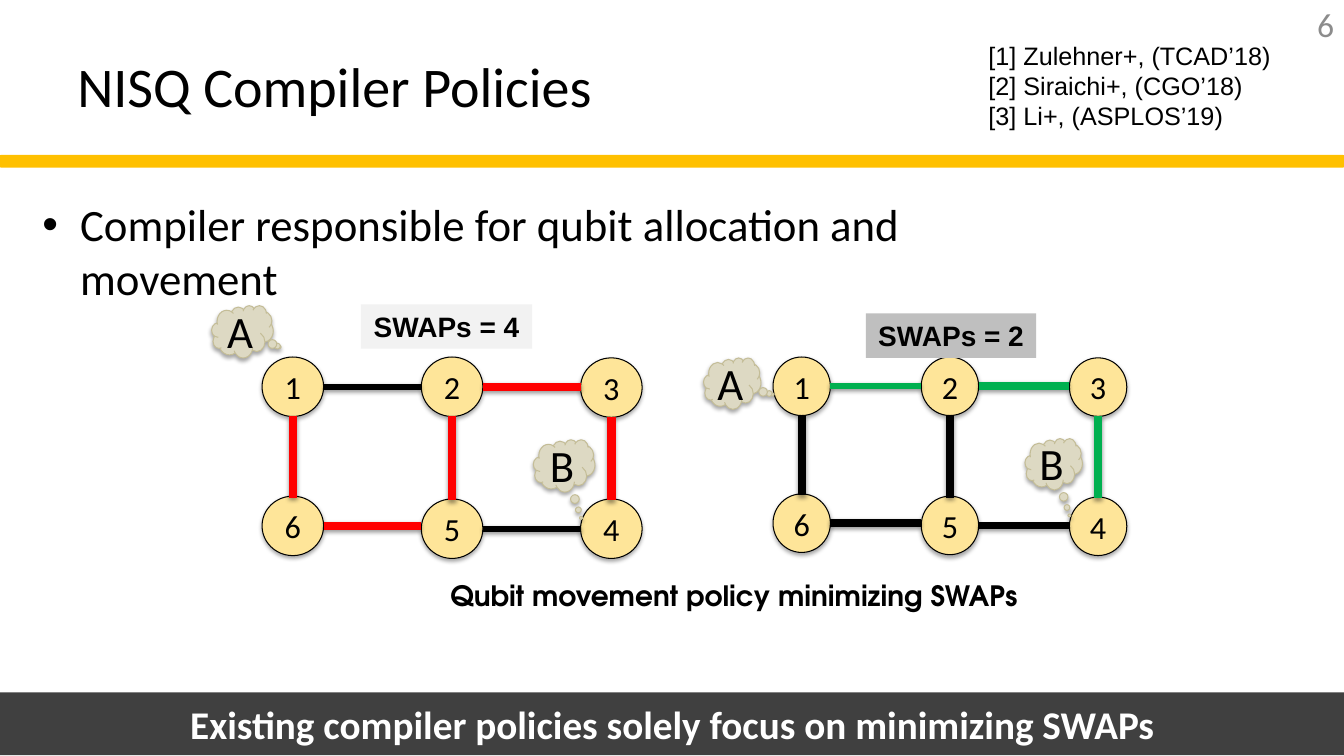
from dataclasses import dataclass

from lxml import etree
from pptx import Presentation
from pptx.dml.color import RGBColor
from pptx.enum import shapes, text
from pptx.oxml import ns
from pptx.util import Pt

# Content
TITLE = "NISQ Compiler Policies"
STATEMENT = "Compiler responsible for qubit allocation and movement"
REFERENCES = ["[1] Zulehner+, (TCAD’18)", "[2] Siraichi+, (CGO’18)", "[3] Li+, (ASPLOS’19)"]
CAPTION = "Qubit movement policy minimizing SWAPs"
TAKEAWAY = "Existing compiler policies solely focus on minimizing SWAPs"
PAGE_NUMBER = "6"

# Qubits in reading order: three in the upper row, three in the lower row
QUBITS = ["1", "2", "3", "6", "5", "4"]


@dataclass
class Theme:
    black: str = "000000"
    white: str = "FFFFFF"
    gold: str = "FFC000"
    dark: str = "404040"
    grey: str = "8C8C8C"
    qubit: str = "FEE599"
    cloud: str = "DDD9C3"
    cloud_line: str = "C4BD97"
    red: str = "FF0000"
    green: str = "00B050"
    light_label: str = "F2F2F2"
    dark_label: str = "BFBFBF"
    body_font: str = "Calibri"
    label_font: str = "Arial"
    caption_font: str = "TeX Gyre Adventor"
    title_size: int = 40
    body_size: int = 32
    takeaway_size: int = 28
    page_size: int = 24
    qubit_size: int = 23
    label_size: int = 20
    reference_size: int = 18
    thin: float = 4.5
    thick: float = 6


theme = Theme()

# Each map: lattice geometry, links (from, to, colour, weight), clouds and label
MAPS = [
    {
        "left": 187.2, "step": 113.75, "size": (44, 42.5),
        "tops": [255, 255, 255.6, 354.4, 356.4, 356.4],
        "links": [("1", "2", theme.black, theme.thin), ("1", "6", theme.red, theme.thick),
                  ("2", "5", theme.red, theme.thick), ("6", "5", theme.red, theme.thick),
                  ("2", "3", theme.red, theme.thick), ("3", "4", theme.red, theme.thick),
                  ("5", "4", theme.black, theme.thin)],
        "clouds": [("A", (151.2, 218.2, 44, 37.4), (0.604, 0.293)),
                   ("B", (381, 314, 44, 37.4), (0.274, 0.997))],
        "label": ("SWAPs = 4", (257.8, 217.4, 122.4, 31.7), theme.light_label),
    },
    {
        "left": 552.2, "step": 105.85, "size": (41, 41.8),
        "tops": [255, 255, 255.6, 352.8, 354.4, 355],
        "links": [("1", "2", theme.green, theme.thin), ("1", "6", theme.black, theme.thick),
                  ("2", "5", theme.black, theme.thick), ("6", "5", theme.black, theme.thick),
                  ("2", "3", theme.green, theme.thick), ("3", "4", theme.green, theme.thick),
                  ("5", "4", theme.black, theme.thin)],
        "clouds": [("A", (502.6, 255.6, 41, 36.7), (0.703, 0.213)),
                   ("B", (732.2, 313.2, 41, 36.7), (0.274, 0.997))],
        "label": ("SWAPs = 2", (618.5, 223.9, 121.7, 31.7), theme.dark_label),
    },
]


def points(box):
    return [Pt(value) for value in box]


def rgb(colour):
    return RGBColor.from_string(colour)


def add_shadow(shape, opacity, distance):
    properties = shape._element.spPr
    for old in properties.findall(ns.qn("a:effectLst")):
        properties.remove(old)
    effects = etree.SubElement(properties, ns.qn("a:effectLst"))
    shadow = etree.SubElement(effects, ns.qn("a:outerShdw"), blurRad=str(Pt(3.1)),
                              dist=str(Pt(distance)), dir="5400000", rotWithShape="0")
    colour = etree.SubElement(shadow, ns.qn("a:srgbClr"), val=theme.black)
    etree.SubElement(colour, ns.qn("a:alpha"), val=str(opacity * 1000))


def write(shape, lines, size, font=theme.body_font, colour=theme.black, bold=False,
          align=text.PP_ALIGN.LEFT, anchor=text.MSO_ANCHOR.TOP, wrap=True, inset=None):
    frame = shape.text_frame
    frame.text = "\n".join(lines)
    frame.auto_size = text.MSO_AUTO_SIZE.NONE
    frame.word_wrap = wrap
    frame.vertical_anchor = anchor
    if inset is not None:
        frame.margin_left = frame.margin_right = Pt(inset)
        frame.margin_top = frame.margin_bottom = Pt(inset)
    for paragraph in frame.paragraphs:
        paragraph.alignment = align
        paragraph.space_before = Pt(0)
        paragraph.font.size = Pt(size)
        paragraph.font.name = font
        paragraph.font.bold = bold
        paragraph.font.color.rgb = rgb(colour)


def add_filled(parent, kind, box, fill, line=None, weight=0.75):
    shape = parent.add_shape(kind, *points(box))
    shape.shadow.inherit = False
    shape.fill.solid()
    shape.fill.fore_color.rgb = rgb(fill)
    if line:
        shape.line.color.rgb = rgb(line)
        shape.line.width = Pt(weight)
    else:
        shape.line.fill.background()
    return shape


def add_symbol(parent, kind, box, fill, line, label, size):
    shape = add_filled(parent, kind, box, fill, line)
    add_shadow(shape, 35, 1.8)
    write(shape, [label], size, align=text.PP_ALIGN.CENTER,
          anchor=text.MSO_ANCHOR.MIDDLE, wrap=False, inset=0)
    return shape


def add_link(parent, start, end, colour, weight):
    (x1, y1, width, height), (x2, y2) = start, end[:2]
    if x1 == x2:
        middle = x1 + width / 2
        ends = (middle, y1 + height, middle, y2 + 1)
    else:
        middle = y1 + height / 2
        ends = (x1 + width, middle, x2, middle)
    link = parent.add_connector(shapes.MSO_CONNECTOR.STRAIGHT, *points(ends))
    link.line.color.rgb = rgb(colour)
    link.line.width = Pt(weight)
    add_shadow(link, 38, 1.6)


def add_map(slide, qubit_map):
    parent = slide.shapes.add_group_shape().shapes
    boxes = {
        name: (qubit_map["left"] + index % 3 * qubit_map["step"], top, *qubit_map["size"])
        for index, (name, top) in enumerate(zip(QUBITS, qubit_map["tops"]))
    }
    for name, box in boxes.items():
        add_symbol(parent, shapes.MSO_SHAPE.OVAL, box, theme.qubit, theme.black,
                   name, theme.qubit_size)
    for start, end, colour, weight in qubit_map["links"]:
        add_link(parent, boxes[start], boxes[end], colour, weight)
    for name, box, tail in qubit_map["clouds"]:
        cloud = add_symbol(parent, shapes.MSO_SHAPE.CLOUD_CALLOUT, box, theme.cloud,
                           theme.cloud_line, name, theme.body_size)
        cloud.adjustments[0], cloud.adjustments[1] = tail
    label, box, fill = qubit_map["label"]
    write(add_filled(parent, shapes.MSO_SHAPE.RECTANGLE, box, fill), [label],
          theme.label_size, theme.label_font, bold=True, align=text.PP_ALIGN.CENTER)


def place(shape, box):
    shape.left, shape.top, shape.width, shape.height = points(box)
    return shape


def main():
    presentation = Presentation()
    presentation.slide_width, presentation.slide_height = Pt(960), Pt(540)
    slide = presentation.slides.add_slide(presentation.slide_layouts[1])
    middle = text.MSO_ANCHOR.MIDDLE

    # Header: title, rule, page number and references
    write(place(slide.shapes.title, (48, 16, 640, 90)), [TITLE], theme.title_size, anchor=middle)
    add_filled(slide.shapes, shapes.MSO_SHAPE.ROUNDED_RECTANGLE, (0, 111.6, 960, 7.2),
               theme.gold, theme.gold, 2)
    write(slide.shapes.add_textbox(*points((909, 0, 51, 34.6))), [PAGE_NUMBER],
          theme.page_size, colour=theme.grey, align=text.PP_ALIGN.RIGHT, anchor=middle)
    write(slide.shapes.add_textbox(*points((699, 25.2, 227, 72.7))), REFERENCES,
          theme.reference_size, theme.label_font)

    # Statement
    statement = place(slide.placeholders[1], (23, 136.8, 760, 49))
    statement.text_frame.text = STATEMENT
    properties = statement.text_frame.paragraphs[0]._p.get_or_add_pPr()
    properties.set("marL", "0")
    properties.set("indent", "0")
    etree.SubElement(properties, ns.qn("a:buNone"))
    write(statement, [STATEMENT], theme.body_size)

    # Qubit maps and caption
    for qubit_map in MAPS:
        add_map(slide, qubit_map)
    write(slide.shapes.add_textbox(*points((314.6, 409.7, 424.8, 31.7))), [CAPTION],
          theme.label_size, theme.caption_font, bold=True, wrap=False)

    # Takeaway band
    band = add_filled(slide.shapes, shapes.MSO_SHAPE.RECTANGLE, (0, 494.6, 960, 44.8), theme.dark)
    write(band, [TAKEAWAY], theme.takeaway_size, colour=theme.white, bold=True,
          align=text.PP_ALIGN.CENTER, anchor=middle)

    presentation.save("out.pptx")


if __name__ == "__main__":
    main()
